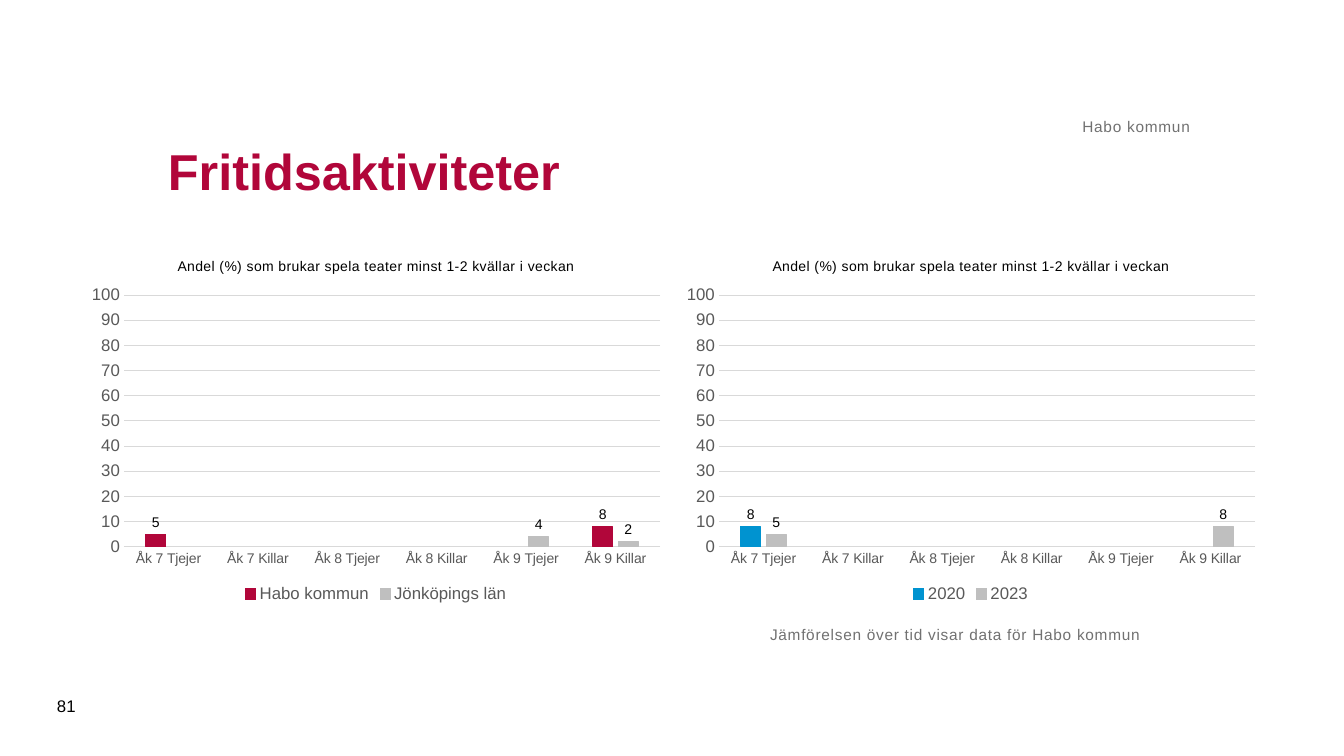
from pptx import Presentation
from pptx.chart.data import CategoryChartData
from pptx.dml.color import RGBColor
from pptx.enum.chart import XL_CHART_TYPE, XL_LABEL_POSITION, XL_LEGEND_POSITION, XL_TICK_MARK
from pptx.enum.text import MSO_ANCHOR, PP_ALIGN
from pptx.util import Pt

COLUMN = XL_CHART_TYPE.COLUMN_CLUSTERED
OUTSIDE = XL_LABEL_POSITION.OUTSIDE_END
BOTTOM = XL_LEGEND_POSITION.BOTTOM
NO_TICK = XL_TICK_MARK.NONE
TOP, MIDDLE, LOW = MSO_ANCHOR.TOP, MSO_ANCHOR.MIDDLE, MSO_ANCHOR.BOTTOM
LEFT, RIGHT = PP_ALIGN.LEFT, PP_ALIGN.RIGHT

BLACK = RGBColor(0x00, 0x00, 0x00)
RED = RGBColor(0xB1, 0x06, 0x3A)
BLUE = RGBColor(0x00, 0x93, 0xD0)
SILVER = RGBColor(0xBF, 0xBF, 0xBF)
PALE = RGBColor(0xD9, 0xD9, 0xD9)
GRAY = RGBColor(0x71, 0x71, 0x71)
DARK = RGBColor(0x59, 0x59, 0x59)

GROUPS = [f"Åk {year} {who}" for year in (7, 8, 9) for who in ("Tjejer", "Killar")]
TITLE = "Andel (%) som brukar spela teater minst 1-2 kvällar i veckan"
CHARTS = [
    [("Habo kommun", RED, (5, None, None, None, None, 8)),
     ("Jönköpings län", SILVER, (None, None, None, None, 4, 2))],
    [("2020", BLUE, (8, None, None, None, None, None)),
     ("2023", SILVER, (5, None, None, None, None, 8))],
]


class Deck:
    """Holds the style and the current slide, and draws each kind of element."""

    face = "Arial"
    scale = 914400 / 100.8
    form = "#,##0;#,##0"

    def __init__(self, wide, high):
        self.prs = Presentation()
        self.prs.slide_width, self.prs.slide_height = self.px(wide, high)
        self.slide = self.prs.slides.add_slide(self.prs.slide_layouts[6])

    def px(self, *sizes):
        return [round(size * self.scale) for size in sizes]

    def style(self, font, size, color, bold=False):
        font.name, font.size, font.bold = self.face, Pt(size), bold
        font.color.rgb = color

    def space(self, para, gap):
        for run in para.runs:
            run.font._element.set("spc", str(gap))

    def text(self, box, words, size, color, anchor=MIDDLE, align=LEFT,
             bold=False, inset=(10, 5), gap=0):
        frame = self.slide.shapes.add_textbox(*self.px(*box)).text_frame
        frame.word_wrap = True
        frame.vertical_anchor = anchor
        side, edge = self.px(*inset)
        frame.margin_left = frame.margin_right = side
        frame.margin_top = frame.margin_bottom = edge
        para = frame.paragraphs[0]
        para.text, para.alignment = words, align
        self.style(para.font, size, color, bold)
        if gap:
            self.space(para, gap)

    def note(self, box, words, **place):
        self.text(box, words, 11, GRAY, inset=(0, 0), gap=50, **place)

    def chart(self, box, title, groups, rows):
        data = CategoryChartData()
        data.categories = groups
        for name, _, values in rows:
            data.add_series(name, values)
        chart = self.slide.shapes.add_chart(COLUMN, *self.px(*box), data).chart
        self.style(chart.font, 10, BLACK)
        chart.has_title = True
        chart.chart_title.include_in_layout = False
        para = chart.chart_title.text_frame.paragraphs[0]
        para.text = title
        self.style(para.font, 10, BLACK)
        self.space(para, 40)
        chart.has_legend = True
        chart.legend.position = BOTTOM
        chart.legend.include_in_layout = False
        self.style(chart.legend.font, 12, DARK)
        self.axes(chart)
        self.bars(chart.plots[0], rows)

    def axes(self, chart):
        for axis, size in ((chart.category_axis, 10), (chart.value_axis, 12)):
            axis.major_tick_mark = axis.minor_tick_mark = NO_TICK
            self.style(axis.tick_labels.font, size, DARK)
        self.line(chart.category_axis.format.line, PALE)
        scale = chart.value_axis
        scale.minimum_scale, scale.maximum_scale, scale.major_unit = 0, 100, 10
        scale.format.line.fill.background()
        self.line(scale.major_gridlines.format.line, PALE)
        scale.tick_labels.number_format = self.form
        scale.tick_labels.number_format_is_linked = False

    def bars(self, plot, rows):
        plot.gap_width, plot.overlap = 219, -27
        plot.vary_by_categories = False
        for bar, (_, color, _) in zip(plot.series, rows):
            bar.format.fill.solid()
            bar.format.fill.fore_color.rgb = color
            self.line(bar.format.line, color)
            label = bar.data_labels
            label.show_value = True
            label.position = OUTSIDE
            label.number_format = self.form
            label.number_format_is_linked = False
            self.style(label.font, 10, BLACK)

    def line(self, line, color):
        line.color.rgb, line.width = color, Pt(0.75)


def main():
    deck = Deck(1344, 756)
    for spot, rows in enumerate(CHARTS):
        deck.chart((80 + 595 * spot, 242, 592, 365), TITLE, GROUPS, rows)
    deck.text((158, 99, 1032, 143), "Fritidsaktiviteter", 36, RED, bold=True)
    deck.note((158, 62, 1032, 74), "Habo kommun", anchor=LOW, align=RIGHT)
    deck.text((47, 686, 57, 40), "81", 12, BLACK)
    deck.note((770, 625, 535, 95), "Jämförelsen över tid visar data för Habo kommun", anchor=TOP)
    deck.prs.save("out.pptx")


if __name__ == "__main__":
    main()
